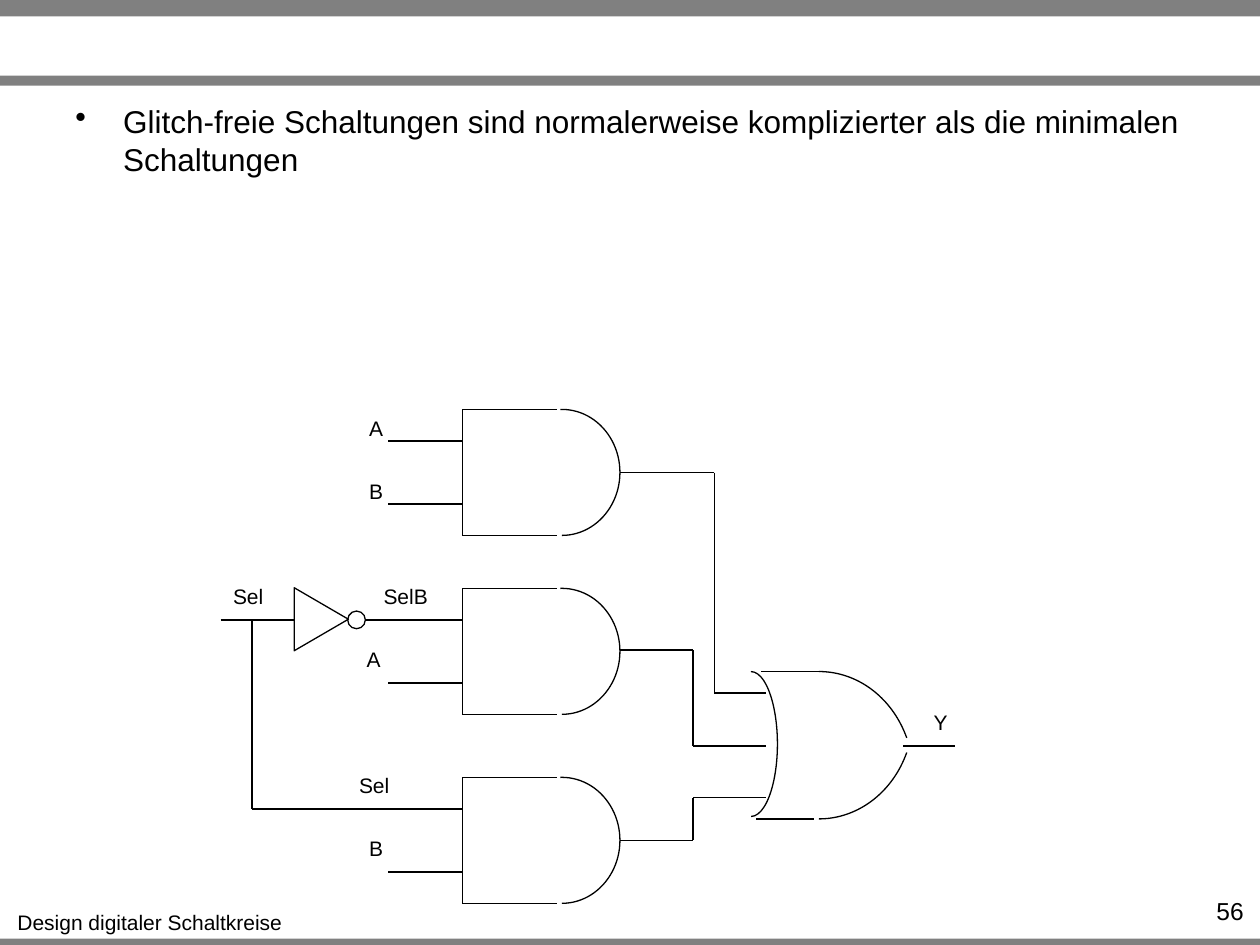
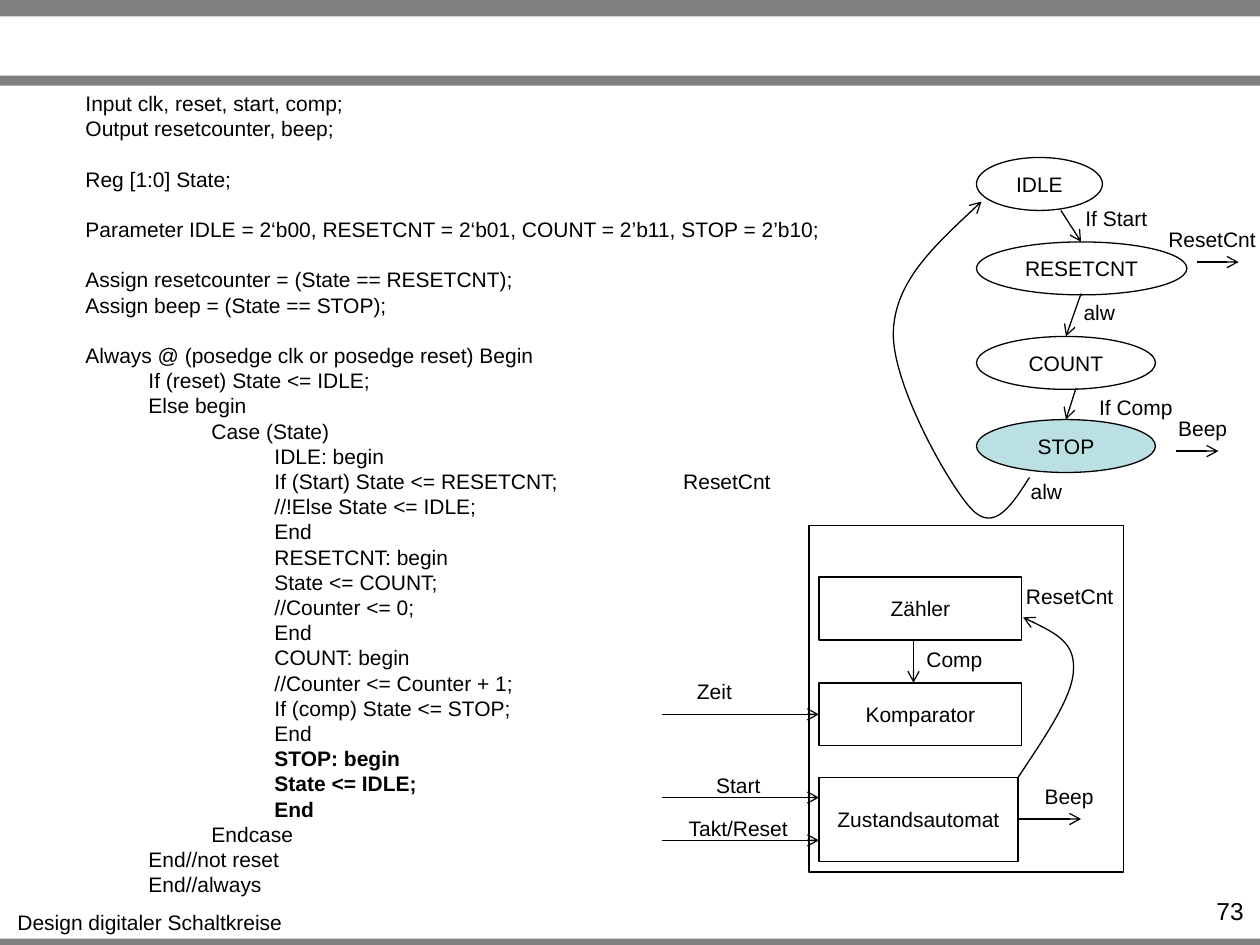
from dataclasses import dataclass
from itertools import pairwise
from typing import NamedTuple

from lxml.etree import SubElement
from pptx import Presentation
from pptx.dml.color import RGBColor
from pptx.enum.shapes import MSO_CONNECTOR, MSO_SHAPE
from pptx.enum.text import MSO_ANCHOR, MSO_AUTO_SIZE, PP_ALIGN
from pptx.oxml.ns import qn
from pptx.util import Inches, Pt


@dataclass(frozen=True)
class Theme:
    """Colours, font and sizes of all slides."""
    ink: RGBColor = RGBColor(0, 0, 0)
    band: RGBColor = RGBColor(0x80, 0x80, 0x80)
    paper: RGBColor = RGBColor(0xFF, 0xFF, 0xFF)
    active: RGBColor = RGBColor(0xBB, 0xE0, 0xE3)
    font: str = "Arial"
    small: Pt = Pt(12)
    page: Pt = Pt(14)
    body: Pt = Pt(18)
    stroke: Pt = Pt(0.75)
    gap: Pt = Pt(14.4)


class Box(NamedTuple):
    """Place of a shape in inches."""
    left: float
    top: float
    width: float
    height: float


class Label(NamedTuple):
    """Short centred text."""
    text: str
    left: float
    top: float
    width: float


class Node(NamedTuple):
    """Outlined shape with a name."""
    text: str
    kind: MSO_SHAPE
    box: Box
    fill: RGBColor | None = None


class Code(NamedTuple):
    """One line of code."""
    text: str
    level: int = 0
    gap: bool = False
    bold: bool = False


THEME = Theme()
FOOTER = Label("Design digitaler Schaltkreise", 0.03, 7.17, 2.32)
BANDS = [Box(0, 7.45, 10, 0.05), Box(0, 0, 10, 0.13), Box(0, 0.6, 10, 0.08)]

GATE_LEFT = 3.67
GATE_TOPS = [3.25, 4.67, 6.17]
WIRES = [
    [(3.08, 3.5), (3.67, 3.5)],
    [(3.08, 4), (3.67, 4)],
    [(1.75, 4.92), (2.33, 4.92)],
    [(2.76, 4.92), (3.67, 4.92)],
    [(3.08, 5.42), (3.67, 5.42)],
    [(2, 4.92), (2, 6.42), (3.67, 6.42)],
    [(3.08, 6.92), (3.67, 6.92)],
    [(4.92, 3.75), (5.67, 3.75), (5.67, 5.5), (6.08, 5.5)],
    [(4.92, 5.16), (5.5, 5.16), (5.5, 5.92), (6.08, 5.92)],
    [(4.92, 6.67), (5.5, 6.67), (5.5, 6.33), (6.08, 6.33)],
    [(6.04, 5.33), (6.5, 5.33)],
    [(6, 6.5), (6.46, 6.5)],
    [(7.17, 5.92), (7.58, 5.92)],
]
PINS = [
    Label("A", 2.83, 3.25, 0.31), Label("B", 2.83, 3.75, 0.31),
    Label("Sel", 1.75, 4.58, 0.44), Label("SelB", 2.94, 4.58, 0.56),
    Label("A", 2.81, 5.08, 0.31), Label("Sel", 2.75, 6.08, 0.44),
    Label("B", 2.83, 6.58, 0.31), Label("Y", 7.31, 5.58, 0.31),
]

RECT, OVAL = MSO_SHAPE.RECTANGLE, MSO_SHAPE.OVAL
NODES = [
    Node("", RECT, Box(6.42, 4.17, 2.5, 2.75)),
    Node("Zustandsautomat", RECT, Box(6.5, 6.17, 1.58, 0.67)),
    Node("Zähler", RECT, Box(6.5, 4.58, 1.61, 0.5)),
    Node("Komparator", RECT, Box(6.5, 5.42, 1.61, 0.5)),
    Node("IDLE", OVAL, Box(7.75, 1.25, 1, 0.42)),
    Node("RESETCNT", OVAL, Box(7.75, 1.92, 1.67, 0.42)),
    Node("COUNT", OVAL, Box(7.75, 2.67, 1.42, 0.42)),
    Node("STOP", OVAL, Box(7.75, 3.33, 1.42, 0.42), THEME.active),
]
ARROWS = [
    [(5.25, 5.67), (6.5, 5.67)],
    [(5.25, 6.33), (6.5, 6.33)],
    [(5.25, 6.67), (6.5, 6.67)],
    [(8.08, 6.5), (8.58, 6.5)],
    [(7.25, 5.08), (7.25, 5.42)],
    [(8.42, 1.67), (8.58, 1.92)],
    [(8.58, 2.33), (8.46, 2.67)],
    [(8.54, 3.08), (8.46, 3.33)],
    [(9.5, 2.08), (9.83, 2.08)],
    [(9.33, 3.58), (9.67, 3.58)],
]
CURVES = [
    [(8.08, 6.17), (8.3, 5.84), (8.52, 5.52), (8.52, 5.31),
     (8.53, 5.1), (8.33, 5), (8.12, 4.9)],
    [(8.17, 3.79), (8.03, 4.01), (7.89, 4.23), (7.71, 4.04),
     (7.53, 3.85), (7.08, 3.05), (7.09, 2.64),
     (7.1, 2.24), (7.45, 1.92), (7.79, 1.6)],
]
SIGNALS = [
    Label("Start", 5.58, 6.08, 0.56), Label("Zeit", 5.43, 5.34, 0.48),
    Label("Takt/Reset", 5.36, 6.42, 1), Label("Beep", 8.19, 6.17, 0.59),
    Label("ResetCnt", 8.04, 4.58, 0.9), Label("Comp", 7.25, 5.08, 0.65),
    Label("ResetCnt", 5.32, 3.67, 0.9), Label("If Start", 8.51, 1.58, 0.7),
    Label("If Comp", 8.62, 3.08, 0.79), Label("ResetCnt", 9.17, 1.75, 0.9),
    Label("Beep", 9.25, 3.25, 0.59), Label("alw", 8.5, 2.33, 0.45),
    Label("alw", 8.08, 3.75, 0.45),
]
CODE = [
    Code("Input clk, reset, start, comp;"),
    Code("Output resetcounter, beep;"),
    Code("Reg [1:0] State;", gap=True),
    Code("Parameter IDLE = 2‘b00, RESETCNT = 2‘b01, COUNT = 2’b11, STOP = 2’b10;", gap=True),
    Code("Assign resetcounter = (State == RESETCNT);", gap=True),
    Code("Assign beep = (State == STOP);"),
    Code("Always @ (posedge clk or posedge reset) Begin", gap=True),
    Code("If (reset) State <= IDLE;", 1),
    Code("Else begin", 1),
    Code("Case (State)", 2),
    Code("IDLE: begin", 3),
    Code("If (Start) State <= RESETCNT;", 3),
    Code("//!Else State <= IDLE;", 3),
    Code("End", 3),
    Code("RESETCNT: begin", 3),
    Code("State <= COUNT;", 3),
    Code("//Counter <= 0;", 3),
    Code("End", 3),
    Code("COUNT: begin", 3),
    Code("//Counter <= Counter + 1;", 3),
    Code("If (comp) State <= STOP;", 3),
    Code("End", 3),
    Code("STOP: begin", 3, bold=True),
    Code("State <= IDLE;", 3, bold=True),
    Code("End", 3, bold=True),
    Code("Endcase", 2),
    Code("End//not reset", 1),
    Code("End//always", 1),
]


def place(box: Box) -> list[Inches]:
    """Turn a box into lengths."""
    return [Inches(side) for side in box]


def write(para, text: str, size: Pt = THEME.small, align=PP_ALIGN.LEFT, bold: bool = False) -> None:
    """Add one styled run to a paragraph."""
    para.alignment = align
    run = para.add_run()
    run.text = text
    run.font.name, run.font.size, run.font.bold = THEME.font, size, bold
    run.font.color.rgb = THEME.ink


def frame(slide, box: Box, wrap: bool = True):
    """Add a text box and return its frame."""
    text = slide.shapes.add_textbox(*place(box)).text_frame
    text.word_wrap = wrap
    if not wrap:
        text.auto_size = MSO_AUTO_SIZE.SHAPE_TO_FIT_TEXT
    return text


def label(slide, item: Label) -> None:
    """Add a small centred label."""
    text = frame(slide, Box(item.left, item.top, item.width, 0.3), wrap=False)
    write(text.paragraphs[0], item.text, align=PP_ALIGN.CENTER)


def stroke(shape, arrow: bool = False) -> None:
    """Give a thin line, with an arrowhead if asked."""
    shape.line.color.rgb = THEME.ink
    shape.line.width = THEME.stroke
    if arrow:
        SubElement(shape.line._get_or_add_ln(), qn("a:tailEnd"), type="arrow")


def form(slide, kind: MSO_SHAPE, box: Box, fill: RGBColor | None = None):
    """Add an outlined preset shape."""
    shape = slide.shapes.add_shape(kind, *place(box))
    shape.shadow.inherit = False
    shape.fill.background()
    if fill is not None:
        shape.fill.solid()
        shape.fill.fore_color.rgb = fill
    stroke(shape)
    return shape


def wire(slide, points: list[tuple[float, float]], arrow: bool = False) -> None:
    """Join points by straight lines."""
    for start, end in pairwise(points):
        line = slide.shapes.add_connector(
            MSO_CONNECTOR.STRAIGHT, *(Inches(side) for side in start + end))
        stroke(line, arrow)
        SubElement(line._element.spPr, qn("a:effectLst"))


def curve(slide, points: list[tuple[float, float]]) -> None:
    """Draw a smooth arrow through cubic control points."""
    spots = [(Inches(x), Inches(y)) for x, y in points]
    pen = slide.shapes.build_freeform(*spots[0])
    pen.add_line_segments(spots[1:], close=False)
    shape = pen.convert_to_shape()
    shape.shadow.inherit = False
    shape.fill.background()
    stroke(shape, arrow=True)
    route = next(shape._element.iter(qn("a:path")))
    steps = route.findall(qn("a:lnTo"))
    for first in range(0, len(steps), 3):
        bend = SubElement(route, qn("a:cubicBezTo"))
        for step in steps[first:first + 3]:
            bend.append(step[0])
            route.remove(step)


def arc(slide, box: Box, end: float, flip: bool = False) -> None:
    """Draw an arc from the top, or from the foot if flipped."""
    shape = form(slide, MSO_SHAPE.ARC, box)
    shape.adjustments[0], shape.adjustments[1] = 162, end
    if flip:
        shape._element.spPr.xfrm.set("flipV", "1")


def and_gate(slide, top: float) -> None:
    """Draw an AND gate."""
    left, edge, foot = GATE_LEFT, GATE_LEFT + 0.75, top + 1
    wire(slide, [(edge, top), (left, top), (left, foot), (edge, foot)])
    arc(slide, Box(left + 0.33, top, 0.92, 1), 54.9, flip=True)


def base(deck, page: int):
    """Add a slide with bands, footer and page number."""
    slide = deck.slides.add_slide(deck.slide_layouts[6])
    for box in BANDS:
        band = form(slide, RECT, box, THEME.band)
        band.line.fill.background()
    label(slide, FOOTER)
    number = frame(slide, Box(9.1, 7.06, 0.87, 0.24))
    write(number.paragraphs[0], str(page), THEME.page, PP_ALIGN.RIGHT)
    return slide


def circuit(deck) -> None:
    """Build the slide with the gates."""
    slide = base(deck, 56)
    para = frame(slide, Box(0.5, 0.76, 9, 1.99)).paragraphs[0]
    props = para._p.get_or_add_pPr()
    props.set("marL", str(Inches(0.38)))
    props.set("indent", str(-Inches(0.38)))
    SubElement(props, qn("a:buChar"), char="•")
    write(para, "Glitch-freie Schaltungen sind normalerweise komplizierter "
                "als die minimalen Schaltungen", THEME.body)
    for top in GATE_TOPS:
        and_gate(slide, top)
    arc(slide, Box(5.75, 5.33, 0.42, 1.15), 53.88)
    arc(slide, Box(5.75, 5.33, 1.5, 1.67), 201.69)
    arc(slide, Box(5.75, 4.83, 1.5, 1.67), 201.69, flip=True)
    for points in WIRES:
        wire(slide, points)
    form(slide, OVAL, Box(2.76, 4.85, 0.14, 0.14), THEME.paper)
    form(slide, MSO_SHAPE.ISOSCELES_TRIANGLE, Box(2.3, 4.7, 0.5, 0.43)).rotation = 90
    for pin in PINS:
        label(slide, pin)


def machine(deck) -> None:
    """Build the slide with code and states."""
    slide = base(deck, 73)
    for node in NODES:
        text = form(slide, node.kind, node.box, node.fill).text_frame
        text.vertical_anchor = MSO_ANCHOR.MIDDLE
        if node.text:
            write(text.paragraphs[0], node.text, align=PP_ALIGN.CENTER)
    for points in ARROWS:
        wire(slide, points, arrow=True)
    for points in CURVES:
        curve(slide, points)
    text = frame(slide, Box(0.58, 0.67, 6.08, 6.77), wrap=False)
    for row, line in enumerate(CODE):
        para = text.add_paragraph() if row else text.paragraphs[0]
        para.level = line.level
        para._p.get_or_add_pPr().set("marL", str(Inches(0.5 * line.level)))
        if line.gap:
            para.space_before = THEME.gap
        write(para, line.text, bold=line.bold)
    for signal in SIGNALS:
        label(slide, signal)


def main() -> None:
    """Build and save the deck."""
    deck = Presentation()
    deck.slide_width, deck.slide_height = Inches(10), Inches(7.5)
    circuit(deck)
    machine(deck)
    deck.save("out.pptx")


if __name__ == "__main__":
    main()
